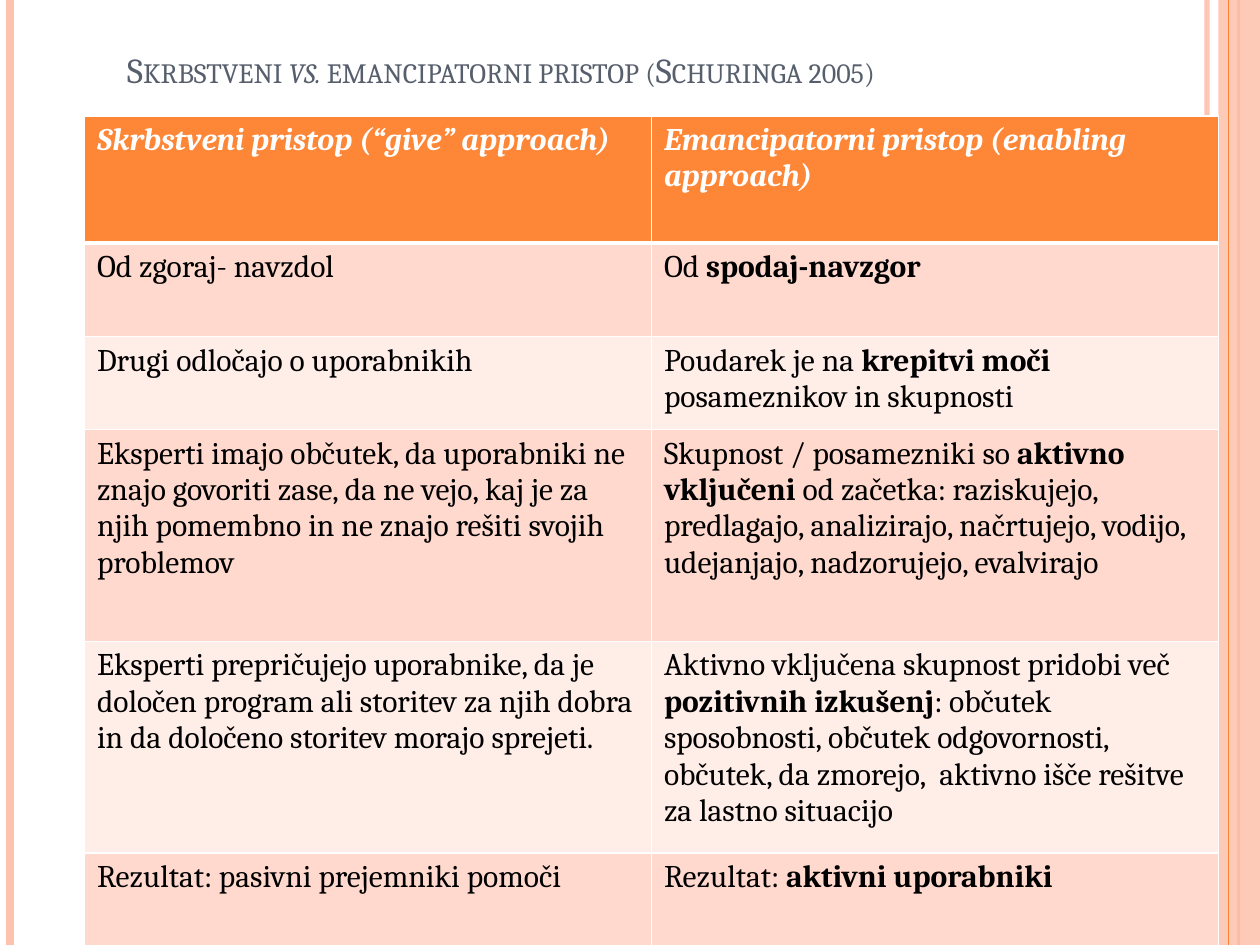
from dataclasses import dataclass

from lxml.etree import SubElement
from pptx import Presentation
from pptx.dml.color import RGBColor as Rgb
from pptx.enum.shapes import MSO_CONNECTOR as Connector, MSO_SHAPE as Shape
from pptx.enum.text import MSO_ANCHOR as Anchor, MSO_AUTO_SIZE as AutoSize, PP_ALIGN as Align
from pptx.oxml import parse_xml
from pptx.oxml.ns import nsdecls, qn
from pptx.util import Inches, Pt


@dataclass(frozen=True)
class Theme:
    """Colours, font and type sizes of the slide."""
    font: str = "Cambria"
    title_size: int = 20
    body_size: int = 18
    orange: str = "FE8637"
    peach: str = "FEC3AE"
    slate: str = "575F6D"
    white: str = "FFFFFF"
    black: str = "000000"
    bands: tuple = ("FFD9CE", "FFEDE8")


TITLE = [("Skrbstveni ", False), ("vs. ", True),
         ("emancipatorni pristop (Schuringa 2005)", False)]
HEADER = ("Skrbstveni pristop (“give” approach)",
          "Emancipatorni pristop (enabling approach)")
ROWS = [
    ("Od zgoraj- navzdol", "Od *spodaj-navzgor*"),
    ("Drugi odločajo o uporabnikih",
     "Poudarek je na *krepitvi moči* posameznikov in skupnosti"),
    ("Eksperti imajo občutek, da uporabniki ne znajo govoriti zase, da ne vejo, "
     "kaj je za njih pomembno in ne znajo rešiti svojih problemov",
     "Skupnost / posamezniki so *aktivno vključeni* od začetka: raziskujejo, "
     "predlagajo, analizirajo, načrtujejo, vodijo, udejanjajo, nadzorujejo, evalvirajo"),
    ("Eksperti prepričujejo uporabnike, da je določen program ali storitev za njih "
     "dobra in da določeno storitev morajo sprejeti.",
     "Aktivno vključena skupnost pridobi več *pozitivnih izkušenj*: občutek "
     "sposobnosti, občutek odgovornosti, občutek, da zmorejo,  aktivno išče rešitve "
     "za lastno situacijo"),
    ("Rezultat: pasivni prejemniki pomoči", "Rezultat: *aktivni uporabniki*"),
]
ROW_HEIGHTS = (1.01, 0.74, 0.74, 1.68, 1.68, 0.74)


class SlideBuilder:
    """Holds the theme and the current slide and adds elements to it."""

    def __init__(self, deck, theme):
        self.theme = theme
        self.height = deck.slide_height
        self.page = deck.slides.add_slide(deck.slide_layouts[5])

    def set_opacity(self, element, percent):
        """Make the colours inside an element partly transparent."""
        for colour in element.iter(qn("a:srgbClr")):
            SubElement(colour, qn("a:alpha"), val=str(percent * 1000))

    def style_span(self, span, size, colour, bold=False, italic=False):
        """Apply the theme font and the given look to a run."""
        font = span.font
        font.name, font.size = self.theme.font, Pt(size)
        font.bold, font.italic = bold, italic
        font.color.rgb = Rgb.from_string(colour)

    def stripe(self, x, colour, width, opacity=100):
        """Add a vertical line over the full slide height."""
        line = self.page.shapes.add_connector(
            Connector.STRAIGHT, Inches(x), 0, Inches(x), self.height)
        line.line.color.rgb = Rgb.from_string(colour)
        line.line.width = Pt(width)
        properties = line._element.spPr
        if opacity < 100:
            self.set_opacity(properties, opacity)
        SubElement(properties, qn("a:effectLst"))

    def band(self, x, width, colour, opacity):
        """Add a translucent rectangle over the full slide height."""
        box = self.page.shapes.add_shape(
            Shape.RECTANGLE, Inches(x), 0, Inches(width), self.height)
        box.shadow.inherit = False
        box.fill.solid()
        box.fill.fore_color.rgb = Rgb.from_string(colour)
        box.line.fill.background()
        self.set_opacity(box._element.spPr, opacity)

    def title(self, parts, left, top, width, height):
        """Fill the title placeholder with small-caps runs."""
        box = self.page.shapes.title
        box.left, box.top = Inches(left), Inches(top)
        box.width, box.height = Inches(width), Inches(height)
        frame = box.text_frame
        frame.auto_size, frame.vertical_anchor = AutoSize.NONE, Anchor.BOTTOM
        para = frame.paragraphs[0]
        para.alignment = Align.LEFT
        for text, italic in parts:
            span = para.add_run()
            span.text = text
            self.style_span(span, self.theme.title_size, self.theme.slate, italic=italic)
            span._r.get_or_add_rPr().set("cap", "small")

    def cell_borders(self, cell, top, bottom):
        """Draw white borders with the given top and bottom widths."""
        properties = cell._tc.get_or_add_tcPr()
        sides = (("lnL", 1), ("lnR", 1), ("lnT", top), ("lnB", bottom))
        for index, (side, width) in enumerate(sides):
            properties.insert(index, parse_xml(
                f'<a:{side} {nsdecls("a")} w="{Pt(width)}"><a:solidFill>'
                f'<a:srgbClr val="{self.theme.white}"/></a:solidFill></a:{side}>'))

    def cell(self, cell, text, fill, colour, header):
        """Fill one table cell; asterisks enclose bold words."""
        cell.fill.solid()
        cell.fill.fore_color.rgb = Rgb.from_string(fill)
        para = cell.text_frame.paragraphs[0]
        for index, part in enumerate(text.split("*")):
            if part:
                span = para.add_run()
                span.text = part
                self.style_span(span, self.theme.body_size, colour,
                                bold=header or index % 2 == 1, italic=header)

    def table(self, header, rows, heights, left, top, width):
        """Add a two-colour banded table with a header row."""
        theme = self.theme
        lines = [header, *rows]
        table = self.page.shapes.add_table(
            len(lines), len(header), Inches(left), Inches(top),
            Inches(width), Inches(sum(heights))).table
        for row, texts in enumerate(lines):
            table.rows[row].height = Inches(heights[row])
            is_header = row == 0
            fill = theme.orange if is_header else theme.bands[(row - 1) % 2]
            colour = theme.white if is_header else theme.black
            for column, text in enumerate(texts):
                cell = table.cell(row, column)
                self.cell(cell, text, fill, colour, is_header)
                self.cell_borders(cell, 3 if row == 1 else 1, 3 if is_header else 1)


def main():
    """Build the slide and save it."""
    deck = Presentation()
    deck.slide_width, deck.slide_height = Inches(10), Inches(7.5)
    theme = Theme()
    slide = SlideBuilder(deck, theme)
    slide.stripe(9.58, theme.peach, 3, opacity=93)
    slide.stripe(0.08, theme.peach, 4.5)
    slide.stripe(9.83, theme.orange, 1.5)
    slide.band(9.67, 0.33, theme.peach, opacity=87)
    slide.stripe(9.75, theme.orange, 0.75)
    slide.title(TITLE, 0.91, 0.21, 8.17, 0.56)
    slide.table(HEADER, ROWS, ROW_HEIGHTS, 0.67, 0.92, 9)
    deck.save("out.pptx")


if __name__ == "__main__":
    main()
